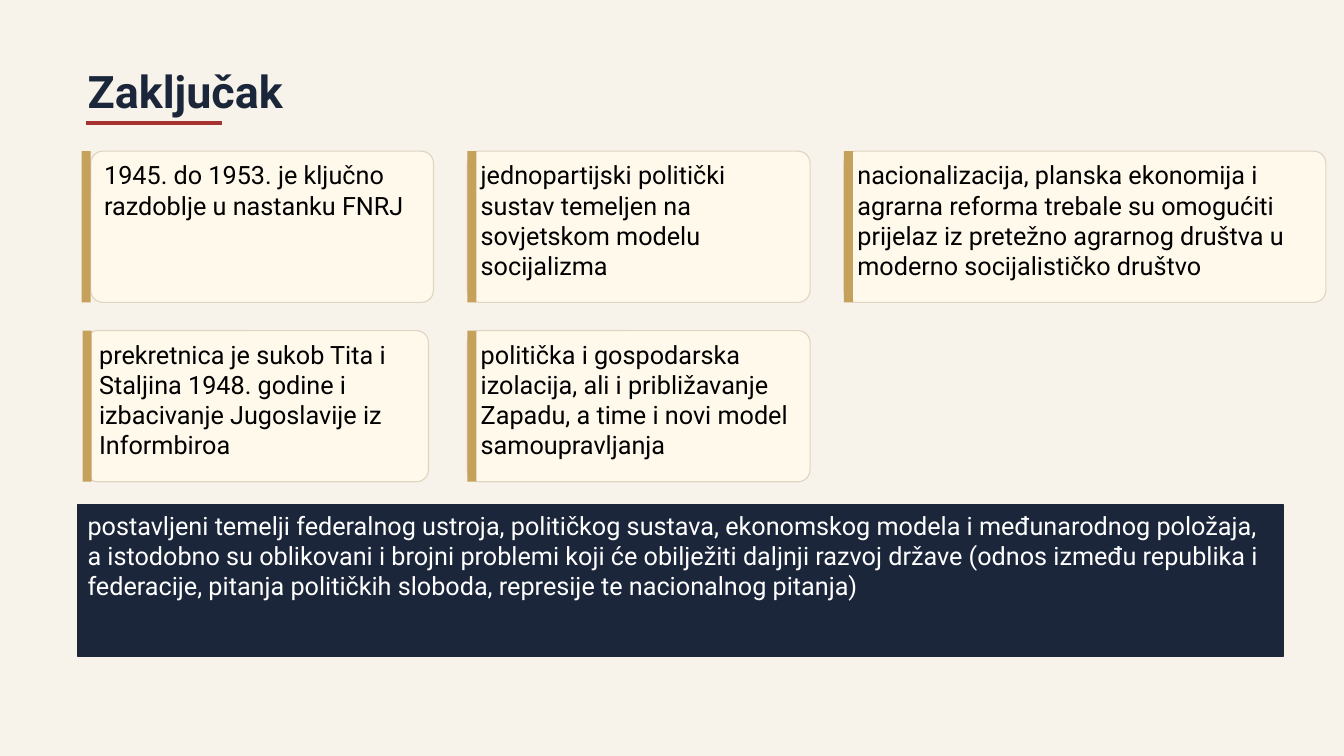
import dataclasses

import pptx
import pptx.dml.color
import pptx.enum.shapes
import pptx.enum.text
import pptx.oxml
import pptx.oxml.ns
import pptx.shapes.autoshape
import pptx.slide
import pptx.text.text
import pptx.util

Inches = pptx.util.Inches
Preset = pptx.enum.shapes.MSO_SHAPE

FONT = "Roboto"
NAVY, CREAM, PAPER = "1B263B", "FFF9EC", "F7F3EA"
GOLD, SAND, RED = "C6A15B", "E0D4C3", "A63232"
BLACK, WHITE = "000000", "FFFFFF"

# Grid of cards, in inches
GRID_LEFT, GRID_TOP = 0.9, 1.5
COLUMN_STEP, ROW_STEP = 3.735, 1.78
CARD_WIDTH, WIDE_CARD_WIDTH, CARD_HEIGHT = 3.4, 4.78, 1.5
ACCENT_WIDTH = 0.09
BAND_LEFT = 0.77


@dataclasses.dataclass(frozen=True)
class Card:
    column: int
    row: int
    text: str
    width: float = CARD_WIDTH
    shift: float = 0
    accent_shift: float = 0


CARDS = [
    Card(0, 0, "1945. do 1953. je ključno razdoblje u nastanku FNRJ",
         accent_shift=-ACCENT_WIDTH),
    Card(1, 0, "jednopartijski politički sustav temeljen na sovjetskom modelu "
               "socijalizma"),
    Card(2, 0, "nacionalizacija, planska ekonomija i agrarna reforma trebale su "
               "omogućiti prijelaz iz pretežno agrarnog društva u moderno "
               "socijalističko društvo", width=WIDE_CARD_WIDTH),
    Card(0, 1, "prekretnica je sukob Tita i Staljina 1948. godine i izbacivanje "
               "Jugoslavije iz Informbiroa", shift=-0.05, accent_shift=-0.08),
    Card(1, 1, "politička i gospodarska izolacija, ali i približavanje Zapadu, "
               "a time i novi model samoupravljanja"),
]
CONCLUSION = (
    "postavljeni temelji federalnog ustroja, političkog sustava, ekonomskog modela "
    "i međunarodnog položaja, a istodobno su oblikovani i brojni problemi koji će "
    "obilježiti daljnji razvoj države (odnos između republika i federacije, pitanja "
    "političkih sloboda, represije te nacionalnog pitanja)"
)


def rgb(value: str) -> pptx.dml.color.RGBColor:
    return pptx.dml.color.RGBColor.from_string(value)


def write(frame: pptx.text.text.TextFrame, text: str, size: float, color: str,
          bold: bool = False) -> None:
    frame.word_wrap = True
    frame.vertical_anchor = pptx.enum.text.MSO_ANCHOR.TOP
    paragraph = frame.paragraphs[0]
    paragraph.alignment = pptx.enum.text.PP_ALIGN.LEFT
    run = paragraph.add_run()
    run.text = text
    run.font.name = FONT
    run.font.size = pptx.util.Pt(size)
    run.font.bold = bold
    run.font.color.rgb = rgb(color)


def add_block(slide: pptx.slide.Slide, preset: Preset, left: float, top: float,
              width: float, height: float, fill: str, outline: str = "",
              weight: float = 1) -> pptx.shapes.autoshape.Shape:
    block = slide.shapes.add_shape(
        preset, Inches(left), Inches(top), Inches(width), Inches(height))
    block.shadow.inherit = False
    block.fill.solid()
    block.fill.fore_color.rgb = rgb(fill)
    if outline:
        block.line.color.rgb = rgb(outline)
        block.line.width = pptx.util.Pt(weight)
    else:
        block.line.fill.background()
    return block


def add_card(slide: pptx.slide.Slide, card: Card) -> None:
    left = GRID_LEFT + card.column * COLUMN_STEP
    top = GRID_TOP + card.row * ROW_STEP
    panel = add_block(slide, Preset.ROUNDED_RECTANGLE, left + card.shift, top,
                      card.width, CARD_HEIGHT, CREAM, SAND, 0.8)
    panel.adjustments[0] = 0.08
    write(panel.text_frame, card.text, 18, BLACK)
    add_block(slide, Preset.RECTANGLE, left + card.accent_shift, top,
              ACCENT_WIDTH, CARD_HEIGHT, GOLD)


def add_title(slide: pptx.slide.Slide) -> None:
    title = slide.shapes.title
    title.left, title.top = Inches(BAND_LEFT), Inches(0.58)
    title.width, title.height = Inches(6.67), Inches(0.64)
    write(title.text_frame, "Zaključak", 32, NAVY, bold=True)
    title.text_frame.auto_size = pptx.enum.text.MSO_AUTO_SIZE.SHAPE_TO_FIT_TEXT

    underline = slide.shapes.add_connector(
        pptx.enum.shapes.MSO_CONNECTOR.STRAIGHT,
        Inches(0.85), Inches(1.22), Inches(2.2), Inches(1.22))
    underline.line.color.rgb = rgb(RED)
    underline.line.width = pptx.util.Pt(3)
    underline._element.spPr.append(pptx.oxml.parse_xml(
        f"<a:effectLst {pptx.oxml.ns.nsdecls('a')}/>"))


def main() -> None:
    deck = pptx.Presentation()
    deck.slide_width, deck.slide_height = Inches(13.33), Inches(7.5)
    slide = deck.slides.add_slide(deck.slide_layouts.get_by_name("Title Only"))
    slide.background.fill.solid()
    slide.background.fill.fore_color.rgb = rgb(PAPER)

    # Heading with its red rule
    add_title(slide)

    # Key points
    for card in CARDS:
        add_card(slide, card)

    # Closing band
    band = add_block(slide, Preset.RECTANGLE, BAND_LEFT, 5.01, 11.96, CARD_HEIGHT,
                     NAVY, NAVY)
    write(band.text_frame, CONCLUSION, 18, WHITE)

    deck.save("out.pptx")


if __name__ == "__main__":
    main()
